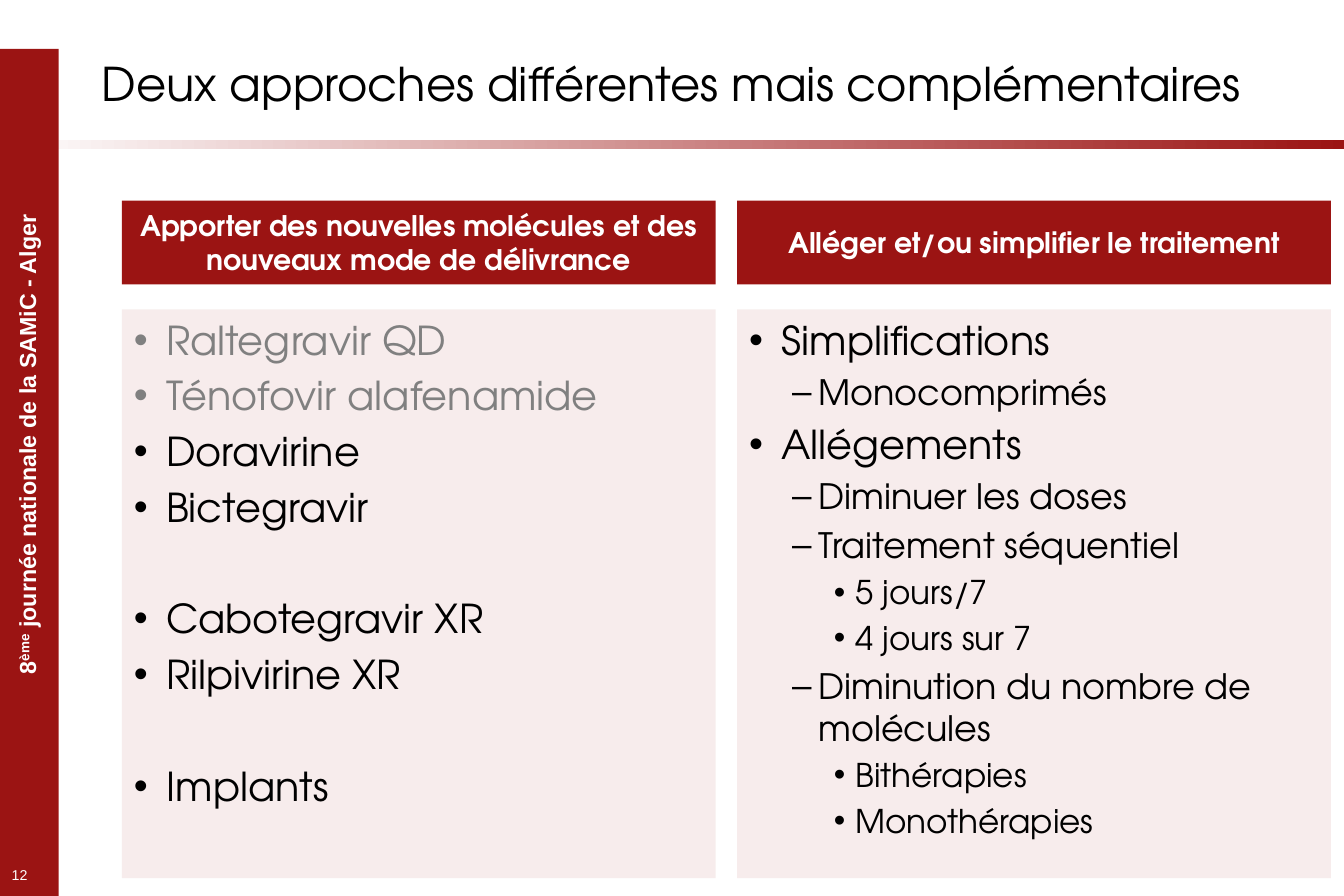
from lxml import etree
from pptx import Presentation
from pptx.dml.color import RGBColor
from pptx.enum.shapes import MSO_SHAPE
from pptx.enum.text import MSO_ANCHOR, MSO_AUTO_SIZE, PP_ALIGN
from pptx.oxml.ns import qn
from pptx.util import Inches, Pt

RECT = MSO_SHAPE.RECTANGLE
MIDDLE, TOP = MSO_ANCHOR.MIDDLE, MSO_ANCHOR.TOP
CENTER, LEFT = PP_ALIGN.CENTER, PP_ALIGN.LEFT
FIXED = MSO_AUTO_SIZE.NONE

RED = RGBColor(0x9B, 0x14, 0x13)
WHITE = RGBColor(0xFF, 0xFF, 0xFF)
BLACK = RGBColor(0, 0, 0)
GREY = RGBColor(0x80, 0x80, 0x80)

MAIN, SIDE = "TeX Gyre Adventor", "Arial"
LEVELS = [(24, 0.27, 0.27, "•"), (21.1, 0.58, 0.22, "–"), (19.7, 0.89, 0.18, "•")]
BREAK = 38.4

DRUGS = [
    ("Raltegravir QD", 0, GREY, False),
    ("Ténofovir alafenamide", 0, GREY, False),
    ("Doravirine", 0, BLACK, False),
    ("Bictegravir", 0, BLACK, False),
    ("Cabotegravir XR", 0, BLACK, True),
    ("Rilpivirine XR", 0, BLACK, False),
    ("Implants", 0, BLACK, True),
]
PLANS = [(text, level, BLACK, False) for text, level in [
    ("Simplifications", 0),
    ("Monocomprimés", 1),
    ("Allégements", 0),
    ("Diminuer les doses", 1),
    ("Traitement séquentiel", 1),
    ("5 jours/7", 2),
    ("4 jours sur 7", 2),
    ("Diminution du nombre de molécules", 1),
    ("Bithérapies", 2),
    ("Monothérapies", 2),
]]


def place(shape, left, top, width, height):
    shape.left, shape.top = Inches(left), Inches(top)
    shape.width, shape.height = Inches(width), Inches(height)


def add_run(para, text, size, color, font=MAIN, bold=False):
    run = para.add_run()
    run.text = text
    run.font.size = Pt(size)
    run.font.name = font
    run.font.bold = bold
    run.font.color.rgb = color
    return run


def set_frame(shape, anchor):
    frame = shape.text_frame
    frame.word_wrap = True
    frame.auto_size = FIXED
    frame.vertical_anchor = anchor
    return frame


def add_bar(slide, left, top, width, height):
    bar = slide.shapes.add_shape(
        RECT, Inches(left), Inches(top), Inches(width), Inches(height))
    bar.shadow.inherit = False
    bar.line.fill.background()
    return bar


def add_text(slide, left, top, width, height):
    return slide.shapes.add_textbox(
        Inches(left), Inches(top), Inches(width), Inches(height))


def add_rule(slide, left, top, width, height):
    fill = add_bar(slide, left, top, width, height).fill
    fill.gradient()
    fill.gradient_angle = 0
    for stop, color in zip(fill.gradient_stops, (WHITE, RED)):
        stop.color.rgb = color


def add_side(slide, left, top, width, height):
    bar = add_bar(slide, left, top, width, height)
    bar.fill.solid()
    bar.fill.fore_color.rgb = RED

    label = add_text(slide, left - 1.82, top + 3.14, 4.1, 0.34)
    label.rotation = 270
    label.text_frame.word_wrap = False
    para = label.text_frame.paragraphs[0]
    para.alignment = CENTER
    add_run(para, "8", 14, WHITE, SIDE, True)
    power = add_run(para, "ème", 14, WHITE, SIDE, True)
    power._r.get_or_add_rPr().set("baseline", "30000")
    add_run(para, " journée nationale de la SAMiC - Alger", 14, WHITE, SIDE, True)

    page = add_text(slide, left, top + height - 0.3, 0.46, 0.24)
    page.text_frame.word_wrap = True
    add_run(page.text_frame.paragraphs[0], "12", 8.6, WHITE, SIDE)


def add_title(title, left, top, width, height):
    place(title, left, top, width, height)
    para = set_frame(title, MIDDLE).paragraphs[0]
    para.alignment = CENTER
    add_run(para, "Deux approches différentes mais complémentaires", 28, BLACK)


def add_item(para, text, level, color, first, gap):
    size, margin, hang, mark = LEVELS[level]
    props = para._p.get_or_add_pPr()
    props.set("marL", str(Inches(margin)))
    props.set("indent", str(-Inches(hang)))
    etree.SubElement(props, qn("a:buChar")).set("char", mark)
    para.level = level
    para.alignment = LEFT
    para.space_before = Pt(0 if first else BREAK if gap else round(size * 0.2, 1))
    add_run(para, text, size, color)


def add_column(head, body, name, items, left, top, width, height):
    place(head, left, top, width, 0.7)
    head.fill.solid()
    head.fill.fore_color.rgb = RED
    para = set_frame(head, MIDDLE).paragraphs[0]
    para.alignment = CENTER
    para.space_before = Pt(0)
    add_run(para, name, 17.1, WHITE, bold=True)

    place(body, left, top + 0.91, width, height - 0.91)
    body.fill.solid()
    body.fill.fore_color.rgb = RED
    tint = body.fill._xPr.find(".//" + qn("a:srgbClr"))
    etree.SubElement(tint, qn("a:alpha")).set("val", "8000")
    frame = set_frame(body, TOP)
    for i, (text, level, color, gap) in enumerate(items):
        para = frame.add_paragraph() if i else frame.paragraphs[0]
        add_item(para, text, level, color, i == 0, gap)


def main():
    deck = Presentation()
    deck.slide_width, deck.slide_height = Inches(11.25), Inches(7.5)
    slide = deck.slides.add_slide(deck.slide_layouts[4])
    title, *parts = slide.placeholders
    add_rule(slide, 0, 1.17, 11.25, 0.08)
    add_side(slide, 0, 0.41, 0.49, 7.09)
    add_title(title, 0.56, 0.35, 10.12, 0.69)
    columns = [
        ("Apporter des nouvelles molécules et des nouveaux mode de délivrance", DRUGS),
        ("Alléger et/ou simplifier le traitement", PLANS),
    ]
    for i, (name, items) in enumerate(columns):
        head, body = parts[2 * i:2 * i + 2]
        add_column(head, body, name, items, 1.02 + 5.15 * i, 1.68, 4.97, 5.67)
    deck.save("out.pptx")


if __name__ == "__main__":
    main()
